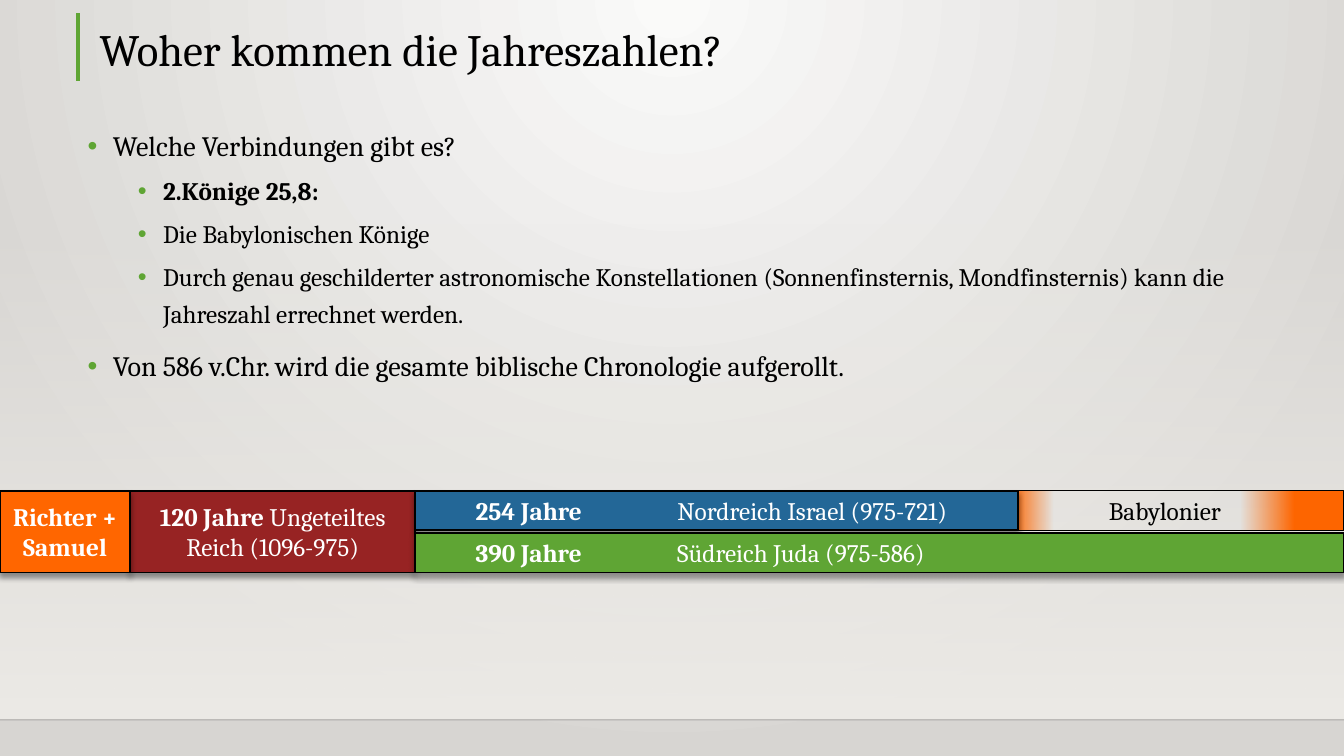
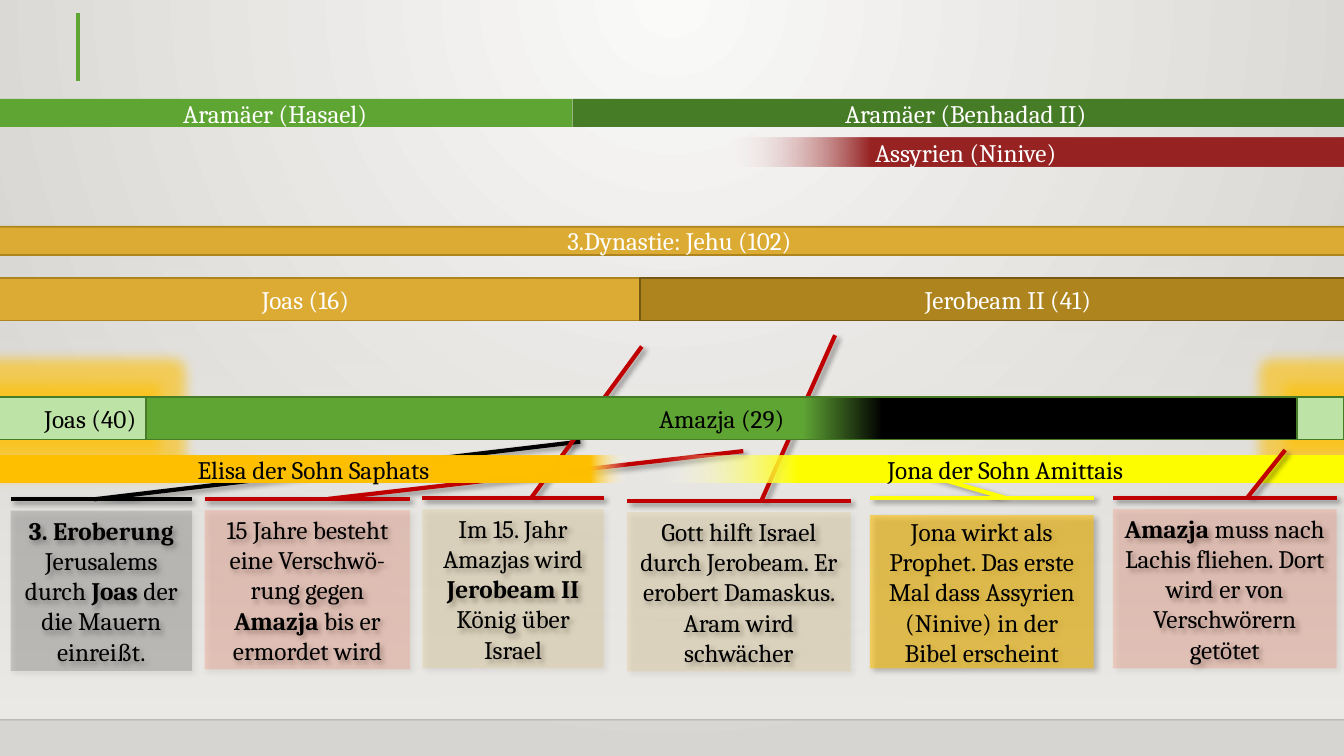
from lxml import etree
from pptx import Presentation, util as u
from pptx.dml.color import RGBColor
from pptx.enum import shapes, text
from pptx.oxml import parse_xml
from pptx.oxml.ns import nsdecls, qn

BLACK = RGBColor(0x00, 0x00, 0x00)
WHITE = RGBColor(0xFF, 0xFF, 0xFF)
PAPER = RGBColor(0xFA, 0xFA, 0xF9)
STONE = RGBColor(0xD7, 0xD5, 0xD2)
FLOOR = RGBColor(0xED, 0xEB, 0xE7)
GREEN = RGBColor(0x5F, 0xA5, 0x34)
DARK_GREEN = RGBColor(0x47, 0x7C, 0x27)
PALE_GREEN = RGBColor(0xBD, 0xE3, 0xA6)
GOLD = RGBColor(0xDC, 0xAB, 0x34)
DARK_GOLD = RGBColor(0xAE, 0x84, 0x1E)
BROWN = RGBColor(0x74, 0x58, 0x14)
AMBER = RGBColor(0xFF, 0xC0, 0x00)
YELLOW = RGBColor(0xFF, 0xFF, 0x00)
ORANGE = RGBColor(0xFF, 0x66, 0x00)
SCARLET = RGBColor(0xFF, 0x33, 0x00)
RED = RGBColor(0xC0, 0x00, 0x00)
MAROON = RGBColor(0x97, 0x23, 0x23)
BLUE = RGBColor(0x23, 0x67, 0x97)

FONT = "Cambria"
KIND = shapes.MSO_SHAPE
ALIGN = text.PP_ALIGN
ANCHOR = text.MSO_ANCHOR

prs = Presentation()
prs.slide_width, prs.slide_height = u.Inches(13.33), u.Inches(7.5)
X, Y = prs.slide_width / 100, prs.slide_height / 100  # one percent of the slide

LINEAR = '<a:lin ang="%d" scaled="0"/>'
ACROSS, DOWN = LINEAR % 0, LINEAR % 5400000
RADIAL = ('<a:path path="circle"><a:fillToRect l="43000" t="0" r="43000" '
          'b="100000"/></a:path>')
SHADOW = ('<a:outerShdw %s blurRad="50800" dist="38100" dir="{}" rotWithShape="0">'
          '<a:srgbClr val="000000"><a:alpha val="40000"/></a:srgbClr>'
          '</a:outerShdw>' % nsdecls("a"))
SHADOW_DOWN, SHADOW_DIAGONAL = SHADOW.format(5400000), SHADOW.format(2700000)
GLOW = ('<a:glow %s rad="228600"><a:srgbClr val="%s"><a:alpha val="60000"/>'
        '</a:srgbClr></a:glow>' % (nsdecls("a"), AMBER))


def gradient(fill, element, stops, direction):
    """Fill with stops of (percent, colour, opacity percent)."""
    fill.gradient()
    old = element.find(".//" + qn("a:gradFill"))
    gs = "".join(
        f'<a:gs pos="{pos * 1000}"><a:srgbClr val="{colour}">'
        f'<a:alpha val="{alpha * 1000}"/></a:srgbClr></a:gs>'
        for pos, colour, alpha in stops)
    old.getparent().replace(old, parse_xml(
        f'<a:gradFill {nsdecls("a")} rotWithShape="1"><a:gsLst>{gs}</a:gsLst>'
        f'{direction}</a:gradFill>'))


def box(s, x, y, w, h, words="", kind=KIND.RECTANGLE, fill=None, alpha=100,
        stops=None, direction=ACROSS, line=None, weight=1.25, effect=None,
        color=WHITE, size=18, align=ALIGN.CENTER, anchor=ANCHOR.MIDDLE):
    """Add a shape placed in percent of the slide; *words* in stars are bold."""
    sp = s.shapes.add_shape(kind, *map(round, (x * X, y * Y, w * X, h * Y)))
    sp.shadow.inherit = False
    spPr = sp._element.spPr
    if stops:
        gradient(sp.fill, spPr, stops, direction)
    elif fill is None:
        sp.fill.background()
    else:
        sp.fill.solid()
        sp.fill.fore_color.rgb = fill
        if alpha < 100:
            etree.SubElement(spPr.find(".//" + qn("a:srgbClr")), qn("a:alpha"),
                             val=str(alpha * 1000))
    if line is None:
        sp.line.fill.background()
    else:
        sp.line.color.rgb = line
        sp.line.width = u.Pt(weight)
    if effect:
        spPr.find(qn("a:effectLst")).append(parse_xml(effect))
    tf = sp.text_frame
    tf.word_wrap, tf.vertical_anchor = True, anchor
    for i, sentence in enumerate(words.split("\n") if words else []):
        p = tf.add_paragraph() if i else tf.paragraphs[0]
        p.alignment = align
        for j, part in enumerate(sentence.split("*")):
            if part:
                r = p.add_run()
                r.text = part
                r.font.name, r.font.size = FONT, u.Pt(size)
                r.font.bold, r.font.color.rgb = j % 2 == 1, color
    return sp


# Shared background, floor and rules
master = prs.slide_master
gradient(master.background.fill, master.element,
         [(0, PAPER, 100), (100, STONE, 100)], RADIAL)
for _ in range(2):
    s = prs.slides.add_slide(prs.slide_layouts[6])
    box(s, 0, 29.33, 100, 65.8, direction=DOWN,
        stops=[(0, FLOOR, 0), (100, FLOOR, 100)])
    for x1, y1, x2, y2, color, weight, alpha in [
            (0, 95.2, 100, 95.2, BLACK, 1, 20),
            (5.78, 1.73, 5.78, 10.67, GREEN, 3, 100)]:
        rule = s.shapes.add_connector(
            shapes.MSO_CONNECTOR.STRAIGHT,
            *map(round, (x1 * X, y1 * Y, x2 * X, y2 * Y)))
        rule.line.color.rgb, rule.line.width = color, u.Pt(weight)
        spPr = rule._element.spPr
        etree.SubElement(spPr.find(".//" + qn("a:srgbClr")), qn("a:alpha"),
                         val=str(alpha * 1000))
        etree.SubElement(spPr, qn("a:effectLst"))
dates, reigns = prs.slides

# Slide 1: where the dates come from
title = box(dates, 6.68, 1.73, 86.78, 9.07, "Woher kommen die Jahreszahlen?",
            color=BLACK, size=32, align=ALIGN.LEFT, anchor=ANCHOR.BOTTOM)
title.text_frame.paragraphs[0].line_spacing = 0.9

body = box(dates, 5.78, 15.47, 89.1, 45.07,
           "Welche Verbindungen gibt es?\n"
           "*2.Könige 25,8:*\n"
           "Die Babylonischen Könige\n"
           "Durch genau geschilderter astronomische Konstellationen "
           "(Sonnenfinsternis, Mondfinsternis) kann die Jahreszahl errechnet "
           "werden.\n"
           "Von 586 v.Chr. wird die gesamte biblische Chronologie aufgerollt.",
           color=BLACK, align=ALIGN.LEFT, anchor=ANCHOR.TOP)
for i, (p, level) in enumerate(zip(body.text_frame.paragraphs, (0, 1, 1, 1, 0))):
    p.level, p.line_spacing = level, 1.2
    if i:
        p.space_before = u.Pt(5 if level else 10)
    pPr = p._p.get_or_add_pPr()
    pPr.set("marL", str(u.Inches(0.75 if level else 0.25)))
    pPr.set("indent", str(u.Inches(-0.25)))
    etree.SubElement(etree.SubElement(pPr, qn("a:buClr")), qn("a:srgbClr"),
                     val=str(GREEN))
    etree.SubElement(pPr, qn("a:buFont"), typeface="Arial")
    etree.SubElement(pPr, qn("a:buChar"), char="•")
    for r in p.runs:
        r.font.size = u.Pt(18 if level else 20)

TOP, LOWER, HALF, FULL = 64.93, 70.53, 5.2, 10.8
SPLIT = 30.9  # the kingdom divides
box(dates, 73.35, TOP, 26.65, HALF, "Babylonier", color=BLACK, line=BLACK,
    weight=0.75, stops=[(0, ORANGE, 0), (7, ORANGE, 100), (19, ORANGE, 0),
                        (71, ORANGE, 0), (86, ORANGE, 100), (100, ORANGE, 100)])
for x, y, right, h, fill, words in [
        (9.68, TOP, SPLIT, FULL, MAROON, "*120 Jahre* Ungeteiltes Reich (1096-975)"),
        (SPLIT, TOP, 75.75, HALF, BLUE, "*\t254 Jahre*\tNordreich Israel (975-721)"),
        (SPLIT, LOWER, 100, HALF, GREEN, "*\t390 Jahre*\tSüdreich Juda (975-586)"),
        (0, TOP, 9.68, FULL, ORANGE, "*Richter + Samuel*")]:
    tabbed = "\t" in words
    era = box(dates, x, y, right - x, h, words, fill=fill, line=BLACK,
              effect=SHADOW_DOWN, align=ALIGN.LEFT if tabbed else ALIGN.CENTER)
    if tabbed:
        pPr = era.text_frame.paragraphs[0]._p.get_or_add_pPr()
        tabs = etree.SubElement(pPr, qn("a:tabLst"))
        for stop in (0.5, 2.5):
            etree.SubElement(tabs, qn("a:tab"), pos=str(u.Inches(stop)), algn="l")

# Slide 2: reigns of Israel and Judah, with events
ISRAEL, JUDAH, REIGN = 36.8, 52.53, 5.6
ARAM, ASSYRIA, POWER = 13.07, 18.27, 3.73
PROPHET, THIN = 60.3, 3.5
JEROBEAM, AMAZJA, USIJA, BENHADAD = 47.62, 10.88, 96.52, 42.6

box(reigns, -1, JUDAH, AMAZJA + 1, REIGN, "Joas (40)", fill=PALE_GREEN,
    line=DARK_GREEN, color=BLACK, align=ALIGN.RIGHT, effect=GLOW)
box(reigns, -2.18, ISRAEL, JEROBEAM + 2.18, REIGN, "Joas (16)", fill=GOLD,
    line=DARK_GOLD)
box(reigns, -2.55, 28.13, 107.25, 7.47, "3.Dynastie: Jehu (102)",
    kind=KIND.RIGHT_ARROW, fill=GOLD, line=DARK_GOLD)
box(reigns, JEROBEAM, ISRAEL, 54.75, REIGN, "Jerobeam II (41)", fill=DARK_GOLD,
    line=BROWN)
box(reigns, USIJA, JUDAH, 100 - USIJA, REIGN, fill=PALE_GREEN, line=DARK_GREEN,
    effect=GLOW)

front_bars = [
    (-1.65, ARAM, BENHADAD, POWER, "Aramäer (Hasael)", dict(fill=GREEN)),
    (0, PROPHET, 46.65, THIN, "Elisa der Sohn Saphats",
     dict(stops=[(0, AMBER, 100), (94, AMBER, 100), (100, WHITE, 0)], color=BLACK)),
    (AMAZJA, JUDAH, USIJA, REIGN, "Amazja (29)",
     dict(stops=[(57, GREEN, 100), (64, BLACK, 100)], color=BLACK,
          line=DARK_GREEN)),
    (BENHADAD, ARAM, 101.1, POWER, "Aramäer (Benhadad II)", dict(fill=DARK_GREEN)),
    (49.12, PROPHET, 100.5, THIN, "Jona der Sohn Amittais",
     dict(stops=[(0, WHITE, 0), (20, YELLOW, 100), (72, YELLOW, 100)],
          color=BLACK)),
    (BENHADAD, ASSYRIA, 101.1, POWER, "Assyrien (Ninive)",
     dict(stops=[(19, WHITE, 0), (38, MAROON, 100)]))]

events = [
    (0.79, 67.53, 13.5, 21.2, BLACK, 15, BLACK, (0.54, -0.07, -2.14, -0.43),
     "*3. Eroberung* Jerusalems durch *Joas* der die Mauern einreißt."),
    (15.22, 67.47, 15.3, 21.07, SCARLET, 15, RED, (0.4, -0.07, -1.62, -0.37),
     "15 Jahre besteht eine Verschwö-rung gegen *Amazja* bis er ermordet wird"),
    (31.42, 67.33, 13.5, 21.07, GOLD, 15, RED, (0.4, -0.07, -0.21, -1.02),
     "Im 15. Jahr Amazjas wird *Jerobeam II* König über Israel"),
    (46.65, 67.73, 16.65, 21.07, GOLD, 15, RED, (0.4, -0.07, 0.07, -1.11),
     "Gott hilft Israel durch Jerobeam. Er erobert Damaskus. Aram wird schwächer"),
    (64.72, 68.13, 16.65, 20.27, AMBER, 56, YELLOW, (0.39, -0.11, 0.81, -0.29),
     "Jona wirkt als Prophet. Das erste Mal dass Assyrien (Ninive) in der Bibel "
     "erscheint"),
    (82.8, 67.33, 16.65, 21.07, SCARLET, 15, RED, (0.4, -0.07, 0.23, -0.37),
     "*Amazja* muss nach Lachis fliehen. Dort wird er von Verschwörern getötet")]

for x, y, w, h, fill, alpha, line, adjustments, words in events:
    if words == events[-1][-1]:  # the last event lies over the bars
        for left, top, right, height, label, style in front_bars:
            box(reigns, left, top, right - left, height, label, **style)
    sp = box(reigns, x, y, w, h, words, kind=KIND.LINE_CALLOUT_1_ACCENT_BAR,
             fill=fill, alpha=alpha, line=line, weight=3, color=BLACK,
             effect=SHADOW_DIAGONAL)
    # A quarter turn swaps the sides about the same centre
    shift = (sp.width - sp.height) // 2
    sp.left, sp.top = sp.left + shift, sp.top - shift
    sp.width, sp.height = sp.height, sp.width
    sp.rotation = 90
    sp.text_frame._txBody.bodyPr.set("vert", "vert270")
    for i, value in enumerate(adjustments):
        sp.adjustments[i] = value

prs.save("out.pptx")
